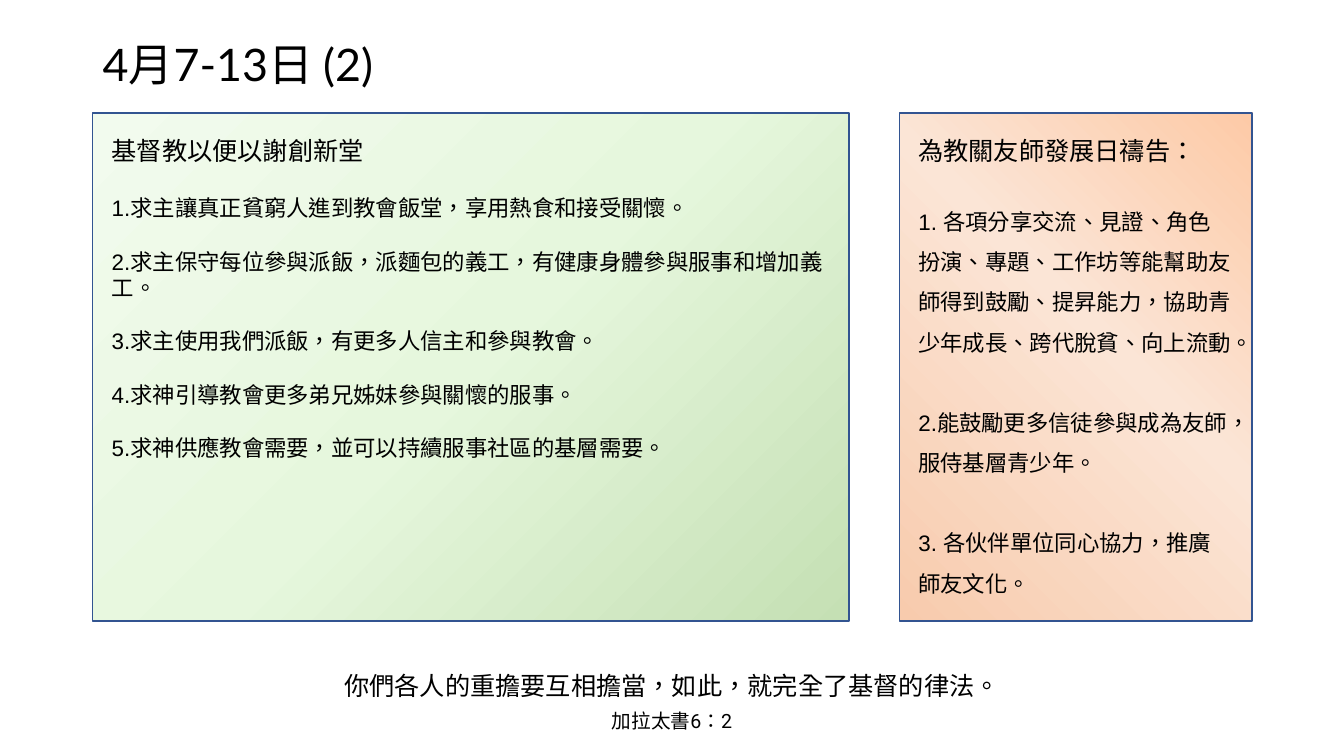
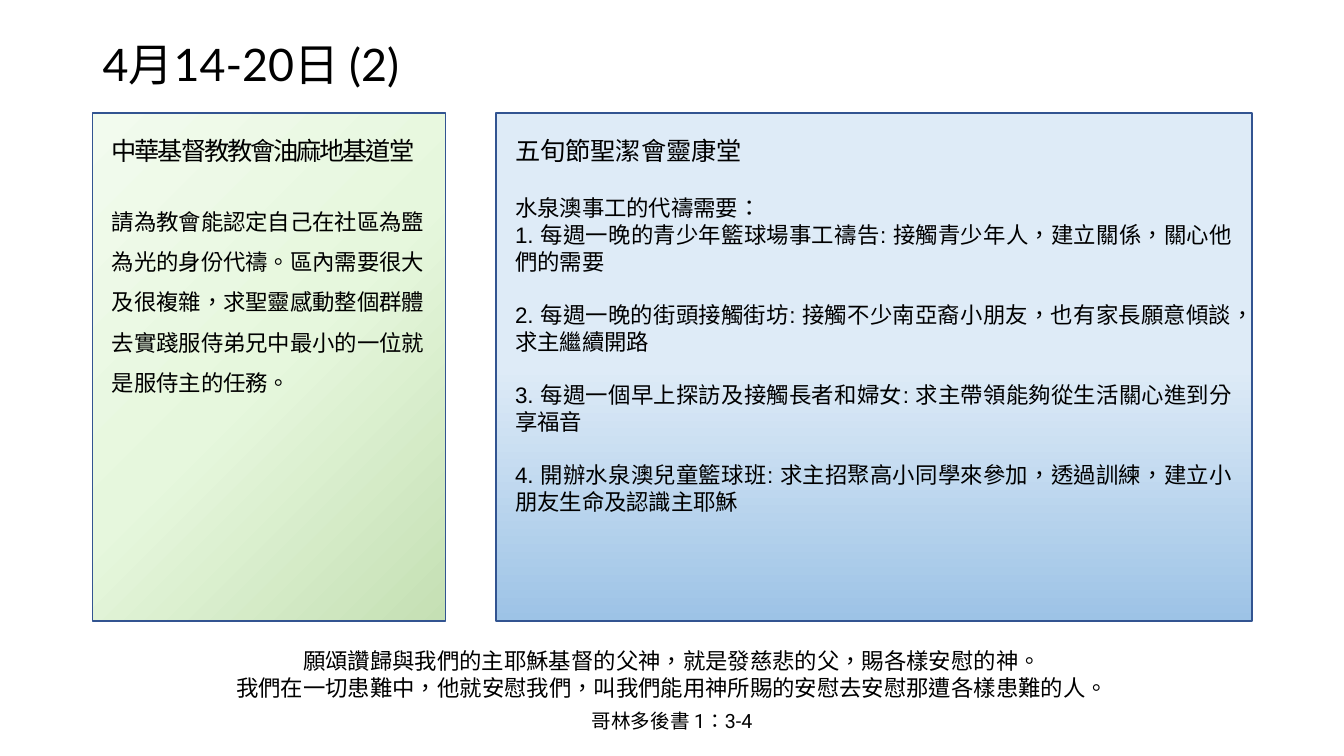
from copy import deepcopy

from pptx import Presentation
from pptx.dml.color import RGBColor
from pptx.enum.shapes import MSO_SHAPE as Shape
from pptx.enum.text import MSO_ANCHOR as Anchor, PP_ALIGN as Align
from pptx.oxml.ns import qn
from pptx.util import Inches, Pt

BLACK, BORDER = "000000", "325491"
GREEN = (225, [(0, "C5E0B4"), (0.5, "E6F7DD"), (1, "F2FBEE")])
ORANGE = (315, [(0, "F8CBAD"), (0.57, "FBE5D6"), (1, "FDCAA7")])
BLUE = (270, [(0, "9DC3E6"), (0.5, "DEEBF7"), (1, "DCEBF8")])
HEAD, BODY, SMALL = 18, 16, 14
LEFT, TOP, HIGH = 0.92, 1.12, 5.04
WIDE, SLIM, GAP = 7.5, 3.5, 0.5
HEAD_GAP, LINE_GAP, LOOSE_GAP = 21, 18.7, 28.5


def color(code):
    return RGBColor.from_string(code)


def add_frame(slide, left, top, width, height, anchor=Anchor.TOP):
    box = slide.shapes.add_textbox(
        Inches(left), Inches(top), Inches(width), Inches(height))
    frame = box.text_frame
    frame.word_wrap = True
    frame.vertical_anchor = anchor
    return frame


def add_para(frame, lines, size, font, align=Align.LEFT, before=0, after=0,
             pitch=1.0, tight=0):
    """Add a paragraph; lines are joined by line breaks, tight is in points."""
    para = frame.paragraphs[0]
    if para.runs:
        para = frame.add_paragraph()
    para.alignment = align
    para.line_spacing = pitch
    para.space_before, para.space_after = Pt(before), Pt(after)
    for i, line in enumerate(lines):
        if i:
            para.add_line_break()
        run = para.add_run()
        run.text = line
        run.font.size = Pt(size)
        run.font.name = font
        run.font.color.rgb = color(BLACK)
        props = run._r.get_or_add_rPr()
        props.set("lang", "zh-TW")
        props.set("altLang", "en-US")
        if tight:
            props.set("spc", str(int(tight * 100)))


def fill_grad(shape, angle, stops):
    """Fill with three stops; angle runs clockwise."""
    fill = shape.fill
    fill.gradient()
    stop_list = shape._element.spPr.find(qn("a:gradFill")).find(qn("a:gsLst"))
    stop_list.append(deepcopy(stop_list[0]))
    for stop, (place, code) in zip(fill.gradient_stops, stops):
        stop.position = place
        stop.color.rgb = color(code)
    fill.gradient_angle = 360 - angle


def add_title(slide, text):
    frame = add_frame(slide, LEFT, 0.3, 6.56, 0.72, Anchor.MIDDLE)
    add_para(frame, [text], 32, "Lato", pitch=0.9)


def add_panel(slide, left, width, grad, head, items, tight=0):
    """Items are (text, space before, line spacing, alignment)."""
    card = slide.shapes.add_shape(
        Shape.RECTANGLE, Inches(left), Inches(TOP), Inches(width), Inches(HIGH))
    card.shadow.inherit = False
    fill_grad(card, *grad)
    card.line.color.rgb = color(BORDER)
    card.line.width = Pt(1)
    frame = add_frame(slide, left + 0.09, TOP + 0.17, width - 0.19, HIGH - 0.34)
    add_para(frame, [head], HEAD, "Arial", tight=tight)
    for text, before, pitch, align in items:
        add_para(frame, [text], BODY, "Arial", align, before, pitch=pitch)


def add_verse(slide, lines, source, size):
    height = 0.48 + 0.24 * len(lines)
    frame = add_frame(slide, 2.11, 7.32 - height, 9.11, height, Anchor.BOTTOM)
    add_para(frame, lines, size, "Roboto", Align.CENTER, after=6)
    add_para(frame, [source], SMALL, "Roboto", Align.CENTER)


def space_items(texts, gap, pitch=1.0, align=Align.LEFT, first=HEAD_GAP):
    return [(text, gap if i else first, pitch, align)
            for i, text in enumerate(texts)]


def add_week(deck, title, panels, verse):
    """Build one slide; panels run left to right from the margin."""
    slide = deck.slides.add_slide(deck.slide_layouts[6])
    add_title(slide, title)
    left = LEFT
    for width, *parts in panels:
        add_panel(slide, left, width, *parts)
        left += width + GAP
    add_verse(slide, *verse)


def main():
    deck = Presentation()
    deck.slide_width, deck.slide_height = Inches(13.33), Inches(7.5)

    meals = space_items([
        "1.求主讓真正貧窮人進到教會飯堂，享用熱食和接受關懷。",
        "2.求主保守每位參與派飯，派麵包的義工，有健康身體參與服事和增加義工。",
        "3.求主使用我們派飯，有更多人信主和參與教會。",
        "4.求神引導教會更多弟兄姊妹參與關懷的服事。",
        "5.求神供應教會需要，並可以持續服事社區的基層需要。",
    ], LINE_GAP)
    mentors = space_items([
        "1. 各項分享交流、見證、角色扮演、專題、工作坊等能幫助友師得到鼓勵、"
        "提昇能力，協助青少年成長、跨代脫貧、向上流動。",
        "2.能鼓勵更多信徒參與成為友師，服侍基層青少年。",
        "3. 各伙伴單位同心協力，推廣師友文化。",
    ], LOOSE_GAP, 1.5)
    add_week(deck, "4月7-13日 (2)", [
        (WIDE, GREEN, "基督教以便以謝創新堂", meals),
        (SLIM, ORANGE, "為教關友師發展日禱告：", mentors),
    ], (["你們各人的重擔要互相擔當，如此，就完全了基督的律法。"],
        "加拉太書6：2", HEAD))

    salt = space_items([
        "請為教會能認定自己在社區為盬為光的身份代禱。區內需要很大及很複雜，"
        "求聖靈感動整個群體去實踐服侍弟兄中最小的一位就是服侍主的任務。",
    ], 0, 1.5)
    estate = space_items(["水泉澳事工的代禱需要："], 0) + space_items([
        "1. 每週一晚的青少年籃球場事工禱告: 接觸青少年人，建立關係，關心他們的需要",
        "2. 每週一晚的街頭接觸街坊: 接觸不少南亞裔小朋友，也有家長願意傾談，求主繼續開路",
        "3. 每週一個早上探訪及接觸長者和婦女: 求主帶領能夠從生活關心進到分享福音",
        "4. 開辦水泉澳兒童籃球班: 求主招聚高小同學來參加，透過訓練，"
        "建立小朋友生命及認識主耶穌",
    ], LINE_GAP, align=Align.JUSTIFY, first=0)
    add_week(deck, "4月14-20日 (2)", [
        (SLIM, GREEN, "中華基督教教會油麻地基道堂", salt, -1.5),
        (WIDE, BLUE, "五旬節聖潔會靈康堂", estate),
    ], (["願頌讚歸與我們的主耶穌基督的父神，就是發慈悲的父，賜各樣安慰的神。",
         "我們在一切患難中，他就安慰我們，叫我們能用神所賜的安慰去安慰那遭各樣患難的人。"],
        "哥林多後書 1：3-4", BODY))

    deck.save("out.pptx")


if __name__ == "__main__":
    main()
